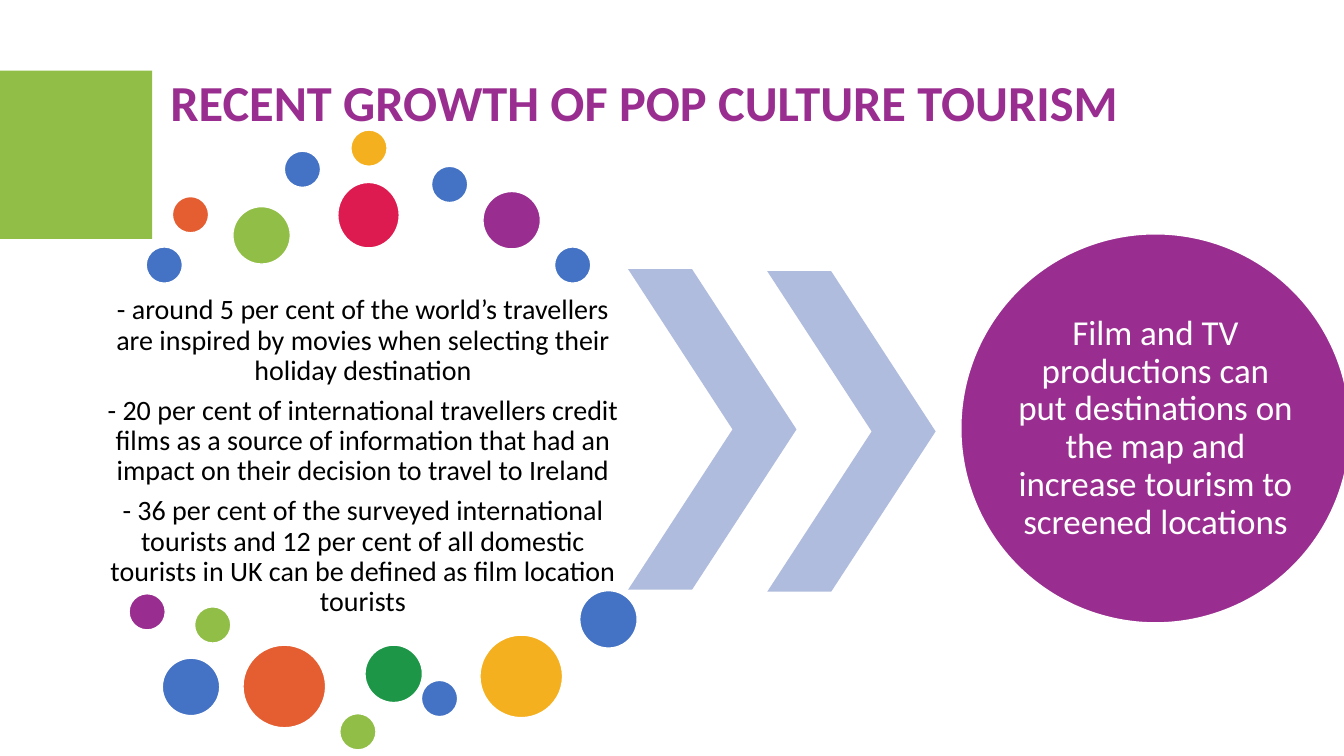
from pptx import Presentation
from pptx.dml.color import RGBColor
from pptx.enum.shapes import MSO_SHAPE as SHAPE
from pptx.enum.text import MSO_ANCHOR as ANCHOR, MSO_AUTO_SIZE as AUTO_SIZE, PP_ALIGN as ALIGN
from pptx.oxml.ns import qn
from pptx.util import Inches, Pt

PURPLE, GREEN, BLUE = "9A2E90", "91BE46", "4472C4"
ORANGE, YELLOW, RED, EMERALD = "E45E32", "F5B020", "DD1B50", "1D9647"
WHITE, BLACK, PALE_BLUE = "FFFFFF", "000000", "B0BCDE"
SMALL, MEDIUM, LARGE = 0.36, 0.57, 0.82

presentation = Presentation()
presentation.slide_width, presentation.slide_height = Inches(13.33), Inches(7.5)
slide = presentation.slides.add_slide(presentation.slide_layouts[1])


def add_filled(kind, left, top, width, height, color, outline=None):
    shape = slide.shapes.add_shape(kind, *map(Inches, (left, top, width, height)))
    shape.shadow.inherit = False
    shape.fill.solid()
    shape.fill.fore_color.rgb = RGBColor.from_string(color)
    if outline:
        shape.line.color.rgb = RGBColor.from_string(outline)
        shape.line.width = Pt(1)
    else:
        shape.line.fill.background()
    return shape


def write_paragraphs(shape, texts, size, color, align, anchor, inset, bold=False):
    frame = shape.text_frame
    frame.text = "\n".join(texts)
    frame_format = {"word_wrap": True, "auto_size": AUTO_SIZE.NONE, "vertical_anchor": anchor}
    for side in ("left", "top", "right", "bottom"):
        frame_format["margin_" + side] = Inches(inset)
    for name, value in frame_format.items():
        setattr(frame, name, value)
    for paragraph in frame.paragraphs:
        properties = paragraph._p.get_or_add_pPr()
        properties.set("marL", "0")
        properties.set("indent", "0")
        properties.append(properties.makeelement(qn("a:buNone"), {}))
        paragraph_format = {"alignment": align, "line_spacing": 0.9,
                            "space_before": Pt(0), "space_after": Pt(0.35 * size)}
        for name, value in paragraph_format.items():
            setattr(paragraph, name, value)
        for name, value in {"name": "Calibri", "size": Pt(size), "bold": bold}.items():
            setattr(paragraph.font, name, value)
        paragraph.font.color.rgb = RGBColor.from_string(color)


# Title and findings
title, findings = slide.shapes.title, slide.placeholders[1]
for placeholder, box in ((title, (1.61, 0.69, 10.55, 0.76)), (findings, (0.95, 3.75, 5.3, 1.56))):
    for name, value in zip(("left", "top", "width", "height"), box):
        setattr(placeholder, name, Inches(value))
write_paragraphs(title, ["RECENT GROWTH OF POP CULTURE TOURISM"], 36, PURPLE,
                 ALIGN.LEFT, ANCHOR.TOP, 0.08, bold=True)
write_paragraphs(findings, [
    "- around 5 per cent of the world’s travellers are inspired by movies when selecting their holiday destination",
    "- 20 per cent of international travellers credit films as a source of information that had an impact on their decision to travel to Ireland",
    "- 36 per cent of the surveyed international tourists and 12 per cent of all domestic tourists in UK can be defined as film location tourists",
], 20, BLACK, ALIGN.CENTER, ANCHOR.MIDDLE, 0.03)

add_filled(SHAPE.RECTANGLE, -0.05, 0.7, 1.56, 1.67, GREEN)

# Dots around the findings: left, top, diameter, color
dots = [
    (1.45, 2.45, SMALL, BLUE), (1.71, 1.95, SMALL, ORANGE), (2.31, 2.05, MEDIUM, GREEN),
    (2.82, 1.5, SMALL, BLUE), (3.48, 1.29, SMALL, YELLOW), (4.28, 1.65, SMALL, BLUE),
    (4.79, 1.9, MEDIUM, PURPLE), (5.5, 2.45, SMALL, BLUE), (1.93, 6.02, SMALL, GREEN),
    (1.28, 5.89, SMALL, PURPLE), (1.61, 6.53, MEDIUM, BLUE), (2.41, 6.4, LARGE, ORANGE),
    (3.37, 7.08, SMALL, GREEN), (3.62, 6.4, MEDIUM, EMERALD), (4.18, 6.75, SMALL, BLUE),
    (4.76, 6.3, LARGE, YELLOW), (5.75, 5.86, MEDIUM, BLUE),
]
for left, top, diameter, color in dots:
    add_filled(SHAPE.OVAL, left, top, diameter, diameter, color, WHITE)
add_filled(SHAPE.OVAL, 3.35, 1.81, 0.61, 0.65, RED, WHITE)

# Chevrons leading to the conclusion
for left, top in ((6.23, 2.67), (7.61, 2.69)):
    chevron = add_filled(SHAPE.CHEVRON, left, top, 1.67, 3.18, PALE_BLUE)
    chevron.adjustments[0] = 0.62

conclusion = add_filled(SHAPE.OVAL, 9.53, 2.32, 3.86, 3.86, PURPLE, WHITE)
write_paragraphs(conclusion, [
    "Film and TV productions can put destinations on the map and increase tourism to screened locations",
], 25, WHITE, ALIGN.CENTER, ANCHOR.MIDDLE, 0)

presentation.save("out.pptx")
